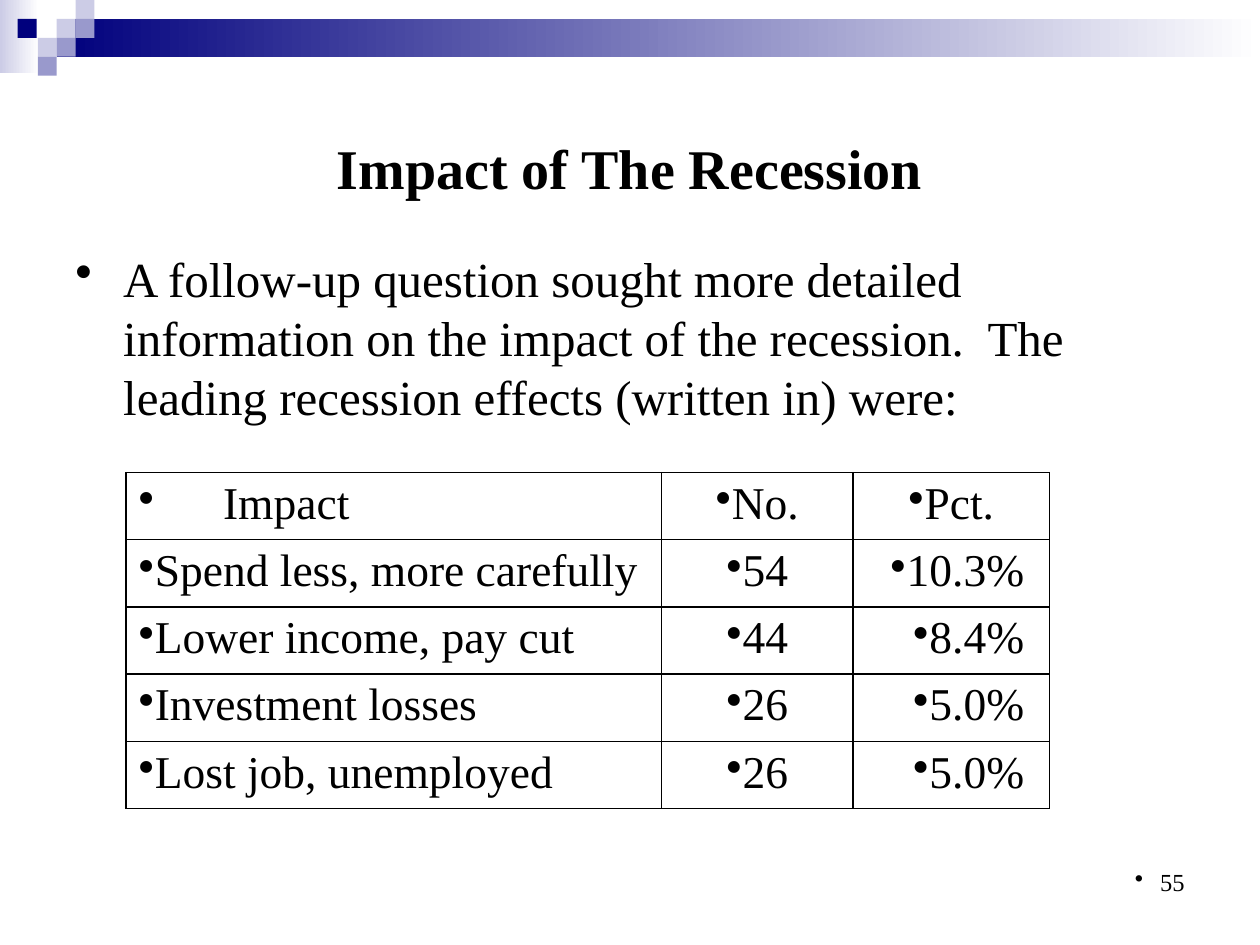
from dataclasses import dataclass

import pptx
import pptx.dml.color
import pptx.enum.shapes
import pptx.enum.text
import pptx.oxml
import pptx.oxml.ns
import pptx.util
from pptx.util import Inches, Pt

ALIGN = pptx.enum.text.PP_ALIGN
ANCHOR = pptx.enum.text.MSO_ANCHOR
NS = pptx.oxml.ns.nsdecls("a")


@dataclass(frozen=True)
class Theme:
    font: str = "Times New Roman"
    ink: str = "000000"
    white: str = "FFFFFF"
    navy: str = "00007D"
    mid: str = "9999CC"
    pale: str = "CCCCE6"
    title: int = 32
    body: int = 28
    cell: int = 26
    number: int = 14


THEME = Theme()
TILE = 0.15
TILES = [
    (0.45, 0.15, THEME.pale), (0.6, 0, THEME.pale), (0.6, 0.15, THEME.mid),
    (0.3, 0.3, THEME.pale), (0.14, 0.15, THEME.navy),
    (0.45, 0.3, THEME.mid), (0.3, 0.45, THEME.mid),
]
ROWS = [
    ("Impact", "No.", "Pct."),
    ("Spend less, more carefully", "54", "10.3%"),
    ("Lower income, pay cut", "44", "8.4%"),
    ("Investment losses", "26", "5.0%"),
    ("Lost job, unemployed", "26", "5.0%"),
]


def rgb(color):
    return pptx.dml.color.RGBColor.from_string(color)


def write(tf, text, size, align=ALIGN.LEFT, bold=False, bullet=False,
          hang=0, line=None):
    """Fill a text frame with one paragraph; hang is the bullet's indent in inches."""
    p = tf.paragraphs[0]
    p.alignment = align
    if line:
        p.line_spacing = Pt(line)
    if bullet:
        pPr = p._p.get_or_add_pPr()
        pPr.set("marL", str(Inches(hang)))
        pPr.set("indent", str(-Inches(hang)))
        pPr.append(pptx.oxml.parse_xml(
            f'<a:buClr {NS}><a:srgbClr val="{THEME.ink}"/></a:buClr>'))
        pPr.append(pptx.oxml.parse_xml(f'<a:buChar {NS} char="•"/>'))
    r = p.add_run()
    r.text = text
    r.font.name = THEME.font
    r.font.size = Pt(size)
    r.font.bold = bold
    r.font.color.rgb = rgb(THEME.ink)


def add_text(slide, box, text, size, anchor=ANCHOR.TOP, **kwargs):
    tf = slide.shapes.add_textbox(*map(Inches, box)).text_frame
    tf.word_wrap = True
    tf.vertical_anchor = anchor
    write(tf, text, size, **kwargs)


def add_rect(slide, box, color, fade_to=None):
    sp = slide.shapes.add_shape(
        pptx.enum.shapes.MSO_SHAPE.RECTANGLE, *map(Inches, box))
    sp.shadow.inherit = False
    sp.line.fill.background()
    if fade_to:
        sp.fill.gradient()
        sp.fill.gradient_angle = 0
        for stop, shade in zip(sp.fill.gradient_stops, (color, fade_to)):
            stop.color.rgb = rgb(shade)
    else:
        sp.fill.solid()
        sp.fill.fore_color.rgb = rgb(color)


def add_header_band(slide):
    add_rect(slide, (0, 0, 0.31, 0.58), THEME.pale, fade_to=THEME.white)
    add_rect(slide, (0.45, 0.15, 9.55, 0.3), THEME.navy, fade_to=THEME.white)
    for x, y, color in TILES:
        add_rect(slide, (x, y, TILE, TILE), color)


def set_borders(cell):
    tcPr = cell._tc.get_or_add_tcPr()
    for i, side in enumerate(("lnL", "lnR", "lnT", "lnB")):
        tcPr.insert(i, pptx.oxml.parse_xml(
            f'<a:{side} {NS} w="{Pt(1)}"><a:solidFill>'
            f'<a:srgbClr val="{THEME.ink}"/></a:solidFill></a:{side}>'))


def add_impact_table(slide):
    widths, row_height = (4.25, 1.52, 1.56), 0.5
    table = slide.shapes.add_table(
        len(ROWS), len(widths), Inches(1), Inches(3.75),
        Inches(sum(widths)), Inches(row_height * len(ROWS))).table
    table.first_row = table.horz_banding = False
    for column, width in zip(table.columns, widths):
        column.width = Inches(width)
    for i, row in enumerate(ROWS):
        for j, text in enumerate(row):
            cell = table.cell(i, j)
            cell.fill.background()
            set_borders(cell)
            align = (ALIGN.LEFT, ALIGN.CENTER, ALIGN.RIGHT)[j]
            if i == 0 and j:
                align = ALIGN.CENTER
            if align == ALIGN.RIGHT:
                cell.margin_right = Inches(0.2)
            write(cell.text_frame, text, THEME.cell, align=align, bullet=True,
                  hang=0.67 if i == j == 0 else 0)


def main():
    prs = pptx.Presentation()
    prs.slide_width, prs.slide_height = Inches(10), Inches(7.5)
    slide = prs.slides.add_slide(prs.slide_layouts[6])
    add_header_band(slide)
    add_text(slide, (0.5, 0.58, 9, 1.5), "Impact of The Recession", THEME.title,
             anchor=ANCHOR.MIDDLE, align=ALIGN.CENTER, bold=True)
    add_text(slide, (0.5, 1.92, 8.5, 1.67),
             "A follow-up question sought more detailed information on the "
             "impact of the recession.  The leading recession effects "
             "(written in) were:",
             THEME.body, bullet=True, hang=0.38, line=33.7)
    add_impact_table(slide)
    add_text(slide, (7.17, 6.83, 2.33, 0.52), "55", THEME.number,
             align=ALIGN.RIGHT, bullet=True, hang=0.2)
    prs.save("out.pptx")


if __name__ == "__main__":
    main()
